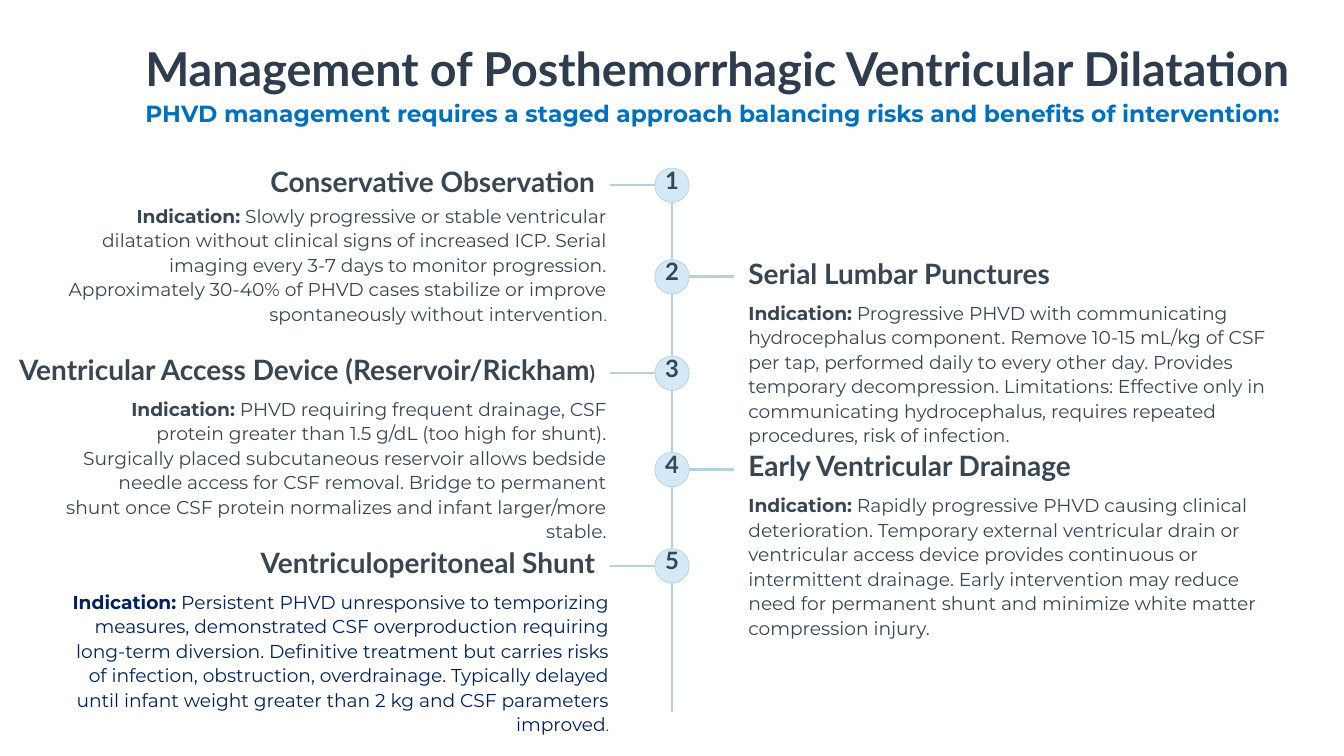
from dataclasses import dataclass

from lxml import etree
from pptx import Presentation
from pptx.dml.color import RGBColor
from pptx.enum.shapes import MSO_CONNECTOR as Connector, MSO_SHAPE as Shape
from pptx.enum.text import MSO_ANCHOR as Anchor, PP_ALIGN as Align
from pptx.oxml.ns import qn
from pptx.util import Pt

COLORS = {"title": "2E3C4E", "text": "384653", "accent": "0070C0",
          "navy": "002060", "line": "BACFDD", "badge": "D4E9F7"}
HEAD_FONT, BODY_FONT = "Lato", "Montserrat"
BADGE = 29.5       # diameter of a numbered circle
BRANCH = 38        # length of a side line
FIRST_STEP, STEP = 78.5, 82.6


@dataclass
class Stage:
    heading: str
    body: str
    heading_end: str = ""
    body_end: str = ""
    body_drop: float = 34
    body_edge: float = 520
    color: str = "text"


STAGES = [
    Stage("Conservative Observation",
          "Slowly progressive or stable ventricular dilatation without clinical signs "
          "of increased ICP. Serial imaging every 3-7 days to monitor progression. "
          "Approximately 30-40% of PHVD cases stabilize or improve spontaneously "
          "without intervention", body_end=".", body_drop=29.5),
    Stage("Serial Lumbar Punctures",
          "Progressive PHVD with communicating hydrocephalus component. Remove 10-15 "
          "mL/kg of CSF per tap, performed daily to every other day. Provides temporary "
          "decompression. Limitations: Effective only in communicating hydrocephalus, "
          "requires repeated procedures, risk of infection."),
    Stage("Ventricular Access Device (Reservoir/Rickham",
          "PHVD requiring frequent drainage, CSF protein greater than 1.5 g/dL (too high "
          "for shunt). Surgically placed subcutaneous reservoir allows bedside needle "
          "access for CSF removal. Bridge to permanent shunt once CSF protein normalizes "
          "and infant larger/more stable.", heading_end=")"),
    Stage("Early Ventricular Drainage",
          "Rapidly progressive PHVD causing clinical deterioration. Temporary external "
          "ventricular drain or ventricular access device provides continuous or "
          "intermittent drainage. Early intervention may reduce need for permanent shunt "
          "and minimize white matter compression injury."),
    Stage("Ventriculoperitoneal Shunt",
          "Persistent PHVD unresponsive to temporizing measures, demonstrated CSF "
          "overproduction requiring long-term diversion. Definitive treatment but carries "
          "risks of infection, obstruction, overdrainage. Typically delayed until infant "
          "weight greater than 2 kg and CSF parameters improved",
          body_end=".", body_edge=522, color="navy"),
]


def rgb(name):
    return RGBColor.from_string(COLORS[name])


def add_text(page, box, spans, font, color, spacing, align=Align.LEFT, wrap=False):
    """Spans are (text, size, bold) triples of one paragraph."""
    frame = page.shapes.add_textbox(*map(Pt, box)).text_frame
    frame.margin_left = frame.margin_top = frame.margin_right = frame.margin_bottom = 0
    frame.word_wrap = wrap
    frame.vertical_anchor = Anchor.TOP
    para = frame.paragraphs[0]
    para.alignment = align
    para.line_spacing = Pt(spacing)
    for text, size, bold in spans:
        if not text:
            continue
        span = para.add_run()
        span.text = text
        span.font.name, span.font.size, span.font.bold = font, Pt(size), bold
        span.font.color.rgb = rgb(color)


def add_line(page, x1, y1, x2, y2):
    line = page.shapes.add_connector(Connector.STRAIGHT, Pt(x1), Pt(y1), Pt(x2), Pt(y2))
    line.line.color.rgb = rgb("line")
    line.line.width = Pt(2.2)
    etree.SubElement(line._element.spPr, qn("a:effectLst"))
    return line


def add_header(page, left, top, width):
    add_text(page, (left, top, width, 43),
             [("Management of Posthemorrhagic Ventricular Dilatation", 40, True)],
             HEAD_FONT, "title", 43)
    add_text(page, (left, top + 49, width, 41),
             [("PHVD management requires a staged approach balancing risks and "
               "benefits of intervention:", 20, True)],
             BODY_FONT, "accent", 21)


def add_badge(page, center, top, number):
    left = center - BADGE / 2
    badge = page.shapes.add_shape(Shape.ROUNDED_RECTANGLE, Pt(left), Pt(top),
                                  Pt(BADGE), Pt(BADGE))
    badge.adjustments[0] = 0.5
    badge.shadow.inherit = False
    badge.fill.solid()
    badge.fill.fore_color.rgb = rgb("badge")
    badge.line.color.rgb = rgb("line")
    badge.line.width = Pt(0.6)
    add_text(page, (left + 4.5, top + 1.8, BADGE - 9, 26), [(str(number), 20.5, True)],
             HEAD_FONT, "text", 20.5, Align.CENTER)
    return badge


def add_stage(page, center, top, number, stage):
    on_left = number % 2 == 1
    side = -1 if on_left else 1
    badge = add_badge(page, center, top, number)

    # Side line
    middle = top + BADGE / 2
    edge = center + side * BADGE / 2
    branch = add_line(page, edge, middle, edge + side * BRANCH, middle)
    branch.begin_connect(badge, 1 if on_left else 3)

    # Heading and description
    if on_left:
        align = Align.RIGHT
        head_left, head_width = 10, center - 66 - 10
        body_left, body_width = 52.6, stage.body_edge - 52.6
    else:
        align = Align.LEFT
        head_left = body_left = center + 65.5
        head_width = body_width = 458
    add_text(page, (head_left, top + 4.3, head_width, 21.5),
             [(stage.heading, 24, True), (stage.heading_end, 17, True)],
             HEAD_FONT, "text", 21.5, align)
    add_text(page, (body_left, top + stage.body_drop, body_width, 131),
             [("Indication:", 16, True), (" " + stage.body, 16, False),
              (stage.body_end, 13, False)],
             BODY_FONT, stage.color, 21, align, wrap=True)


def add_timeline(page, center, top, height):
    add_line(page, center, top, center, top + height)
    for index, stage in enumerate(STAGES):
        offset = FIRST_STEP + (index - 1) * STEP if index else 0
        add_stage(page, center, top + offset, index + 1, stage)


def main():
    deck = Presentation()
    deck.slide_width, deck.slide_height = Pt(1152), Pt(648)
    page = deck.slides.add_slide(deck.slide_layouts[6])
    add_header(page, 124.6, 38.9, 983)
    add_timeline(page, 576, 144, 466)
    deck.save("out.pptx")


if __name__ == "__main__":
    main()
